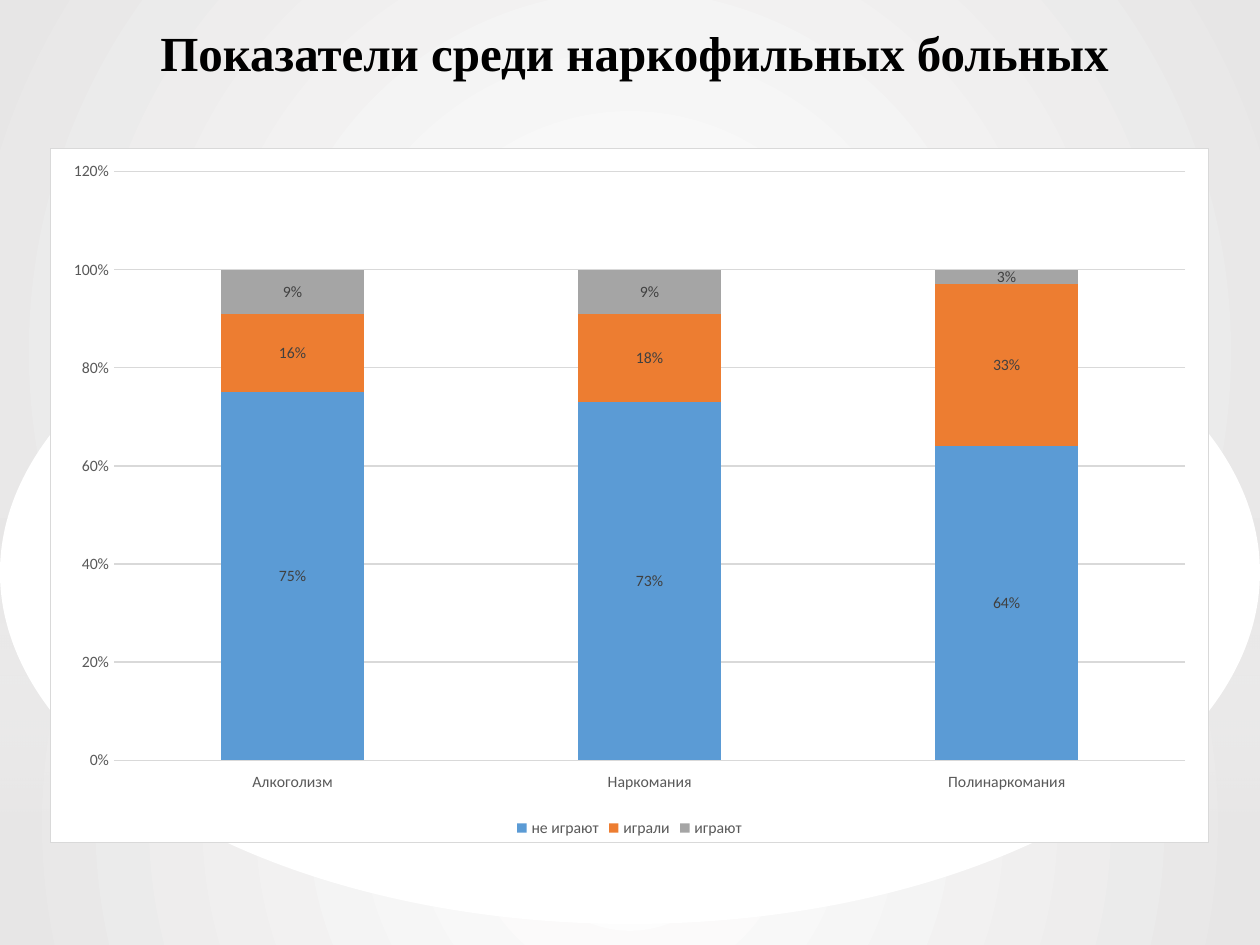
from lxml import etree
from pptx import Presentation
from pptx import util as u
from pptx.chart.data import CategoryChartData
from pptx.dml.color import RGBColor
from pptx.enum import chart as ch, shapes, text
from pptx.oxml import parse_xml
from pptx.oxml.ns import qn

PX = 914400 // 126
A = 'xmlns:a="http://schemas.openxmlformats.org/drawingml/2006/main"'
C = 'xmlns:c="http://schemas.openxmlformats.org/drawingml/2006/chart"'


def rgb(value):
    return RGBColor.from_string(value)


def gradient(props, stops, direction):
    gs = "".join(
        f'<a:gs pos="{pos * 1000}"><a:srgbClr val="{color}">'
        f'<a:alpha val="{alpha * 1000}"/></a:srgbClr></a:gs>'
        for pos, color, alpha in stops
    )
    fill = parse_xml(
        f'<a:gradFill {A} rotWithShape="1"><a:gsLst>{gs}</a:gsLst>{direction}</a:gradFill>'
    )
    props.replace(props.find(qn("a:solidFill")), fill)


CIRCLE = '<a:path path="circle"><a:fillToRect l="{}" t="{}" r="{}" b="{}"/></a:path>'
CENTER = CIRCLE.format(50000, 50000, 50000, 50000)
TOP = CIRCLE.format(50000, 10000, 50000, 90000)
DOWN = '<a:lin ang="5400000" scaled="0"/>'
GLOW = [(0, "FFFFFF", 100), (100, "E7E6E6", 100)]
FADE = [(0, "E7E6E6", 60), (100, "FFFFFF", 0)]

prs = Presentation()
prs.slide_width, prs.slide_height = u.Inches(10), u.Inches(7.5)
s = prs.slides.add_slide(prs.slide_layouts[6])
s.background.fill.solid()
s.background.fill.fore_color.rgb = rgb("DDDCDC")
bg = s.background.fill._xPr
gradient(bg, [(0, "DDDCDC", 100), (100, "BAB6B6", 100)], TOP)

RECT, OVAL = shapes.MSO_SHAPE.RECTANGLE, shapes.MSO_SHAPE.OVAL
for kind, y, h, stops, direction in (
    (RECT, 703, 242, GLOW, CENTER),
    (RECT, 0, 703, GLOW, CENTER),
    (RECT, 519, 315, FADE, DOWN),
    (OVAL, 221, 703, None, None),
):
    sp = s.shapes.add_shape(kind, 0, y * PX, prs.slide_width, h * PX)
    sp.shadow.inherit = False
    sp.line.fill.background()
    sp.fill.solid()
    sp.fill.fore_color.rgb = rgb("FFFFFF")
    if stops:
        gradient(sp._element.spPr, stops, direction)

tf = s.shapes.add_textbox(84 * PX, 16 * PX, 1101 * PX, 71 * PX).text_frame
tf.word_wrap = True
p = tf.paragraphs[0]
p.alignment = text.PP_ALIGN.CENTER
r = p.add_run()
r.text = "Показатели среди наркофильных больных"
for name, value in {"size": u.Pt(28), "name": "Times New Roman", "bold": True}.items():
    setattr(r.font, name, value)
r.font.color.rgb = rgb("000000")

data = CategoryChartData(number_format="0%")
data.categories = ["Алкоголизм", "Наркомания", "Полинаркомания"]
data.add_series("не играют", [0.75, 0.73, 0.64])
data.add_series("играли", [0.16, 0.18, 0.33])
data.add_series("играют", [0.09, 0.09, 0.03])
chart = s.shapes.add_chart(
    ch.XL_CHART_TYPE.COLUMN_STACKED, 50 * PX, 148 * PX, 1159 * PX, 695 * PX, data
).chart
chart.has_title = False
chart.has_legend = True
legend, cat, val = chart.legend, chart.category_axis, chart.value_axis
plot = chart.plots[0]
fonts = [(chart.font, "Arial", 10, "000000")]
fonts += [(o.font, "Calibri", 9, "595959") for o in (legend, cat.tick_labels, val.tick_labels)]

for series, color in zip(plot.series, ("5B9BD5", "ED7D31", "A5A5A5")):
    series.format.fill.solid()
    series.format.fill.fore_color.rgb = rgb(color)
    series.invert_if_negative = False
    labels = series.data_labels
    for name, value in {
        "show_value": True,
        "number_format": "0%",
        "number_format_is_linked": False,
        "position": ch.XL_LABEL_POSITION.CENTER,
    }.items():
        setattr(labels, name, value)
    fonts.append((labels.font, "Calibri", 9, "404040"))

for font, face, size, color in fonts:
    font.name, font.size = face, u.Pt(size)
    font.color.rgb = rgb(color)

for obj, values in (
    (plot, {"gap_width": 150, "overlap": 100, "vary_by_categories": False}),
    (legend, {"position": ch.XL_LEGEND_POSITION.BOTTOM, "include_in_layout": False}),
    (cat, {"tick_label_position": ch.XL_TICK_LABEL_POSITION.LOW}),
    (val, {"minimum_scale": 0, "maximum_scale": 1.2, "major_unit": 0.2}),
    (val.tick_labels, {"number_format": "0%", "number_format_is_linked": False}),
):
    for name, value in values.items():
        setattr(obj, name, value)
for axis in (cat, val):
    axis.major_tick_mark = axis.minor_tick_mark = ch.XL_TICK_MARK.NONE
for line in (cat.format.line, val.major_gridlines.format.line):
    line.color.rgb = rgb("D9D9D9")
    line.width = u.Pt(0.75)
val.format.line.fill.background()

area = etree.fromstring(
    f'<c:spPr {C} {A}><a:solidFill><a:srgbClr val="FFFFFF"/></a:solidFill>'
    '<a:ln w="9525"><a:solidFill><a:srgbClr val="D9D9D9"/></a:solidFill></a:ln></c:spPr>'
)
chart._chartSpace.find(qn("c:chart")).addnext(area)

prs.save("out.pptx")
